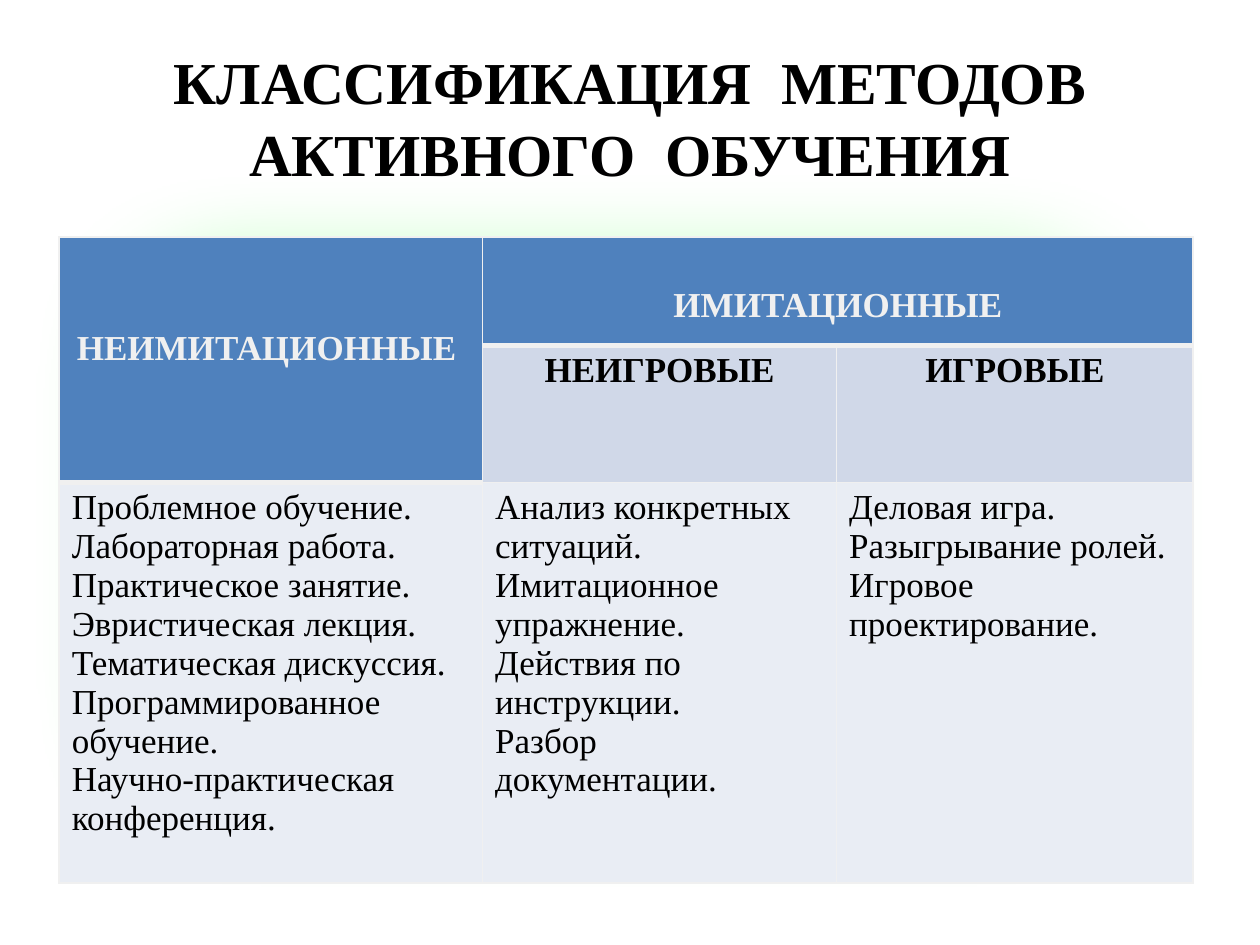
from lxml.etree import SubElement
from pptx import Presentation
from pptx.dml.color import RGBColor
from pptx.enum.shapes import MSO_SHAPE
from pptx.enum.text import MSO_ANCHOR, PP_ALIGN
from pptx.oxml import parse_xml
from pptx.oxml.ns import qn
from pptx.util import Inches, Pt

FONT = "Times New Roman"
COLORS = {"paper": "FFFFFF", "light": "F0F0F0", "ink": "000000", "glow": "99FF99",
          "header": "4F81BD", "subheader": "D0D8E8", "body": "E9EDF4"}
TITLE = "КЛАССИФИКАЦИЯ  МЕТОДОВ АКТИВНОГО  ОБУЧЕНИЯ"
COL_WIDTHS = [3.36, 2.81, 2.83]
ROW_HEIGHTS = [0.86, 1.08, 3.18]
MERGES = [((0, 0), (1, 0)), ((0, 1), (0, 2))]
HEADERS = [(0, 0, "НЕИМИТАЦИОННЫЕ ", 0.73), (0, 1, "ИМИТАЦИОННЫЕ", 0.39)]
SUBHEADERS = [(1, 1, "НЕИГРОВЫЕ"), (1, 2, "ИГРОВЫЕ")]
METHODS = [
    ["Проблемное обучение.", "Лабораторная работа.", "Практическое занятие.",
     "Эвристическая лекция.", "Тематическая дискуссия.",
     "Программированное обучение.", "Научно-практическая конференция."],
    ["Анализ конкретных ситуаций.", "Имитационное упражнение.",
     "Действия по инструкции.", "Разбор документации."],
    ["Деловая игра.", "Разыгрывание ролей.", "Игровое проектирование."],
]


def rgb(name):
    return RGBColor.from_string(COLORS[name])


def style_text(p, size, color, bold, align):
    p.alignment = align
    p.font.name, p.font.size, p.font.bold = FONT, Pt(size), bold
    p.font.color.rgb = rgb(color)


def set_borders(cell, bottom=1):
    tcPr = cell._tc.get_or_add_tcPr()
    for i, (side, width) in enumerate([("L", 1), ("R", 1), ("T", 1), ("B", bottom)]):
        ln = parse_xml(
            f'<a:ln{side} xmlns:a="http://schemas.openxmlformats.org/drawingml/2006/main" '
            f'w="{Pt(width)}"><a:solidFill><a:srgbClr val="{COLORS["light"]}"/>'
            f'</a:solidFill></a:ln{side}>')
        tcPr.insert(i, ln)


def fill_cell(cell, text, fill, color="ink", bold=True, align=PP_ALIGN.CENTER):
    cell.text = text
    style_text(cell.text_frame.paragraphs[0], 20, color, bold, align)
    cell.fill.solid()
    cell.fill.fore_color.rgb = rgb(fill)


def add_glow(s):
    sp = s.shapes.add_shape(MSO_SHAPE.ROUNDED_RECTANGLE,
                            Inches(0.23), Inches(1.33), Inches(9.38), Inches(5.78))
    sp.shadow.inherit = False
    sp.line.fill.background()
    sp.fill.solid()
    sp.fill.fore_color.rgb = rgb("glow")
    spPr = sp._element.spPr
    SubElement(spPr.find(".//" + qn("a:srgbClr")), qn("a:alpha"), val="65000")
    SubElement(spPr.find(qn("a:effectLst")), qn("a:softEdge"), rad=str(Pt(50)))


def add_methods_table(s):
    table = s.shapes.add_table(len(ROW_HEIGHTS), len(COL_WIDTHS), Inches(0.47), Inches(1.88),
                               Inches(sum(COL_WIDTHS)), Inches(sum(ROW_HEIGHTS))).table
    for col, width in zip(table.columns, COL_WIDTHS):
        col.width = Inches(width)
    for row, height in zip(table.rows, ROW_HEIGHTS):
        row.height = Inches(height)
    for start, end in MERGES:
        table.cell(*start).merge(table.cell(*end))
    for r, c, text, top in HEADERS:
        fill_cell(table.cell(r, c), text, "header", "light")
        table.cell(r, c).margin_top = Inches(top)
    for r, c, text in SUBHEADERS:
        fill_cell(table.cell(r, c), text, "subheader")
    for c, names in enumerate(METHODS):
        fill_cell(table.cell(2, c), "\v".join(names), "body", bold=False, align=PP_ALIGN.LEFT)
    header_edge = {(0, 0), (1, 0), (0, 1), (0, 2)}
    for r in range(len(ROW_HEIGHTS)):
        for c in range(len(COL_WIDTHS)):
            set_borders(table.cell(r, c), 3 if (r, c) in header_edge else 1)


def add_title(s):
    tf = s.shapes.add_textbox(Inches(0.5), Inches(0.3), Inches(9), Inches(1.25)).text_frame
    tf.word_wrap = True
    tf.vertical_anchor = MSO_ANCHOR.MIDDLE
    tf.text = TITLE
    style_text(tf.paragraphs[0], 34, "ink", True, PP_ALIGN.CENTER)


def main():
    prs = Presentation()
    prs.slide_width, prs.slide_height = Inches(10), Inches(7.5)
    s = prs.slides.add_slide(prs.slide_layouts[6])
    s.background.fill.solid()
    s.background.fill.fore_color.rgb = rgb("paper")
    add_glow(s)
    add_methods_table(s)
    add_title(s)
    prs.save("out.pptx")


if __name__ == "__main__":
    main()
